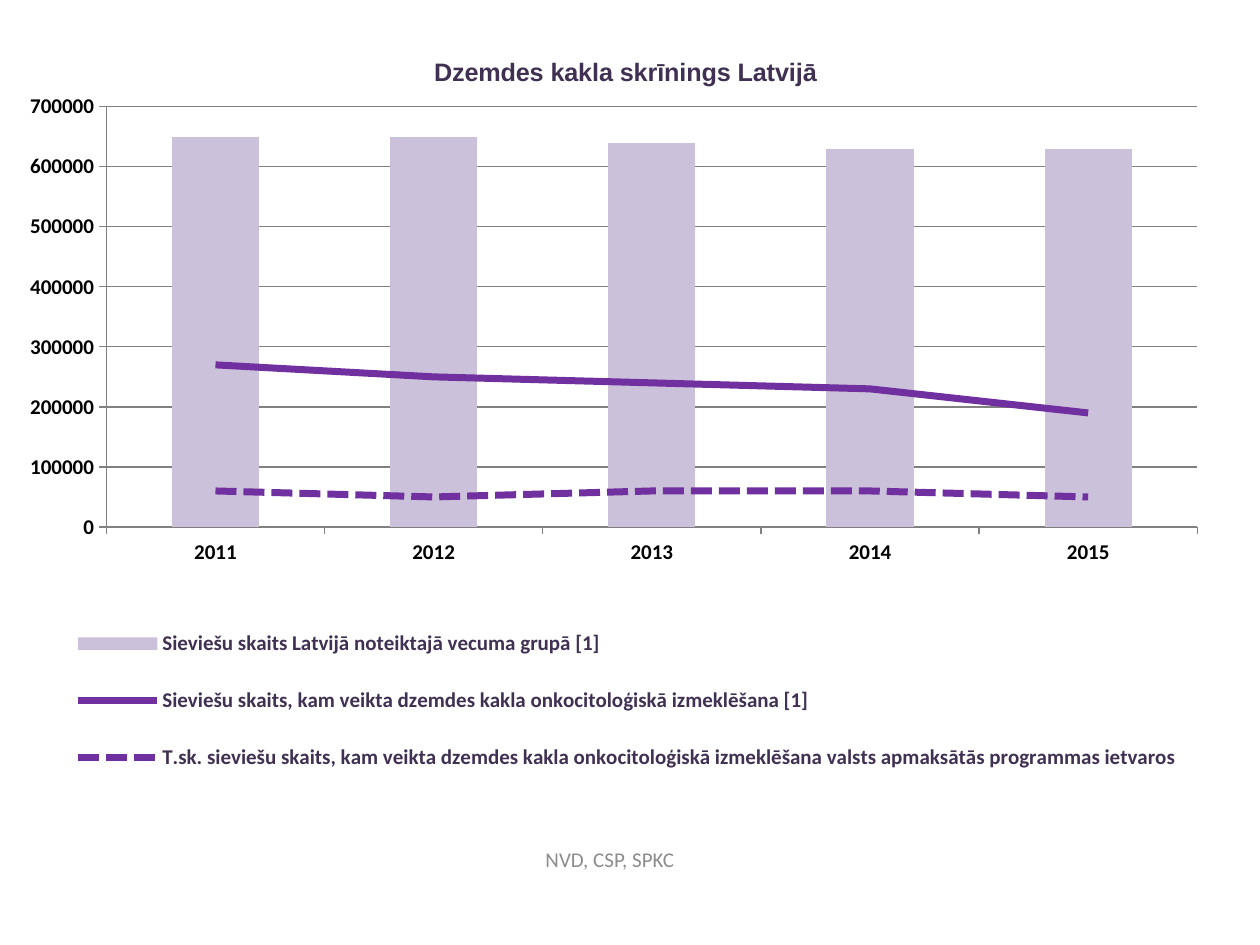
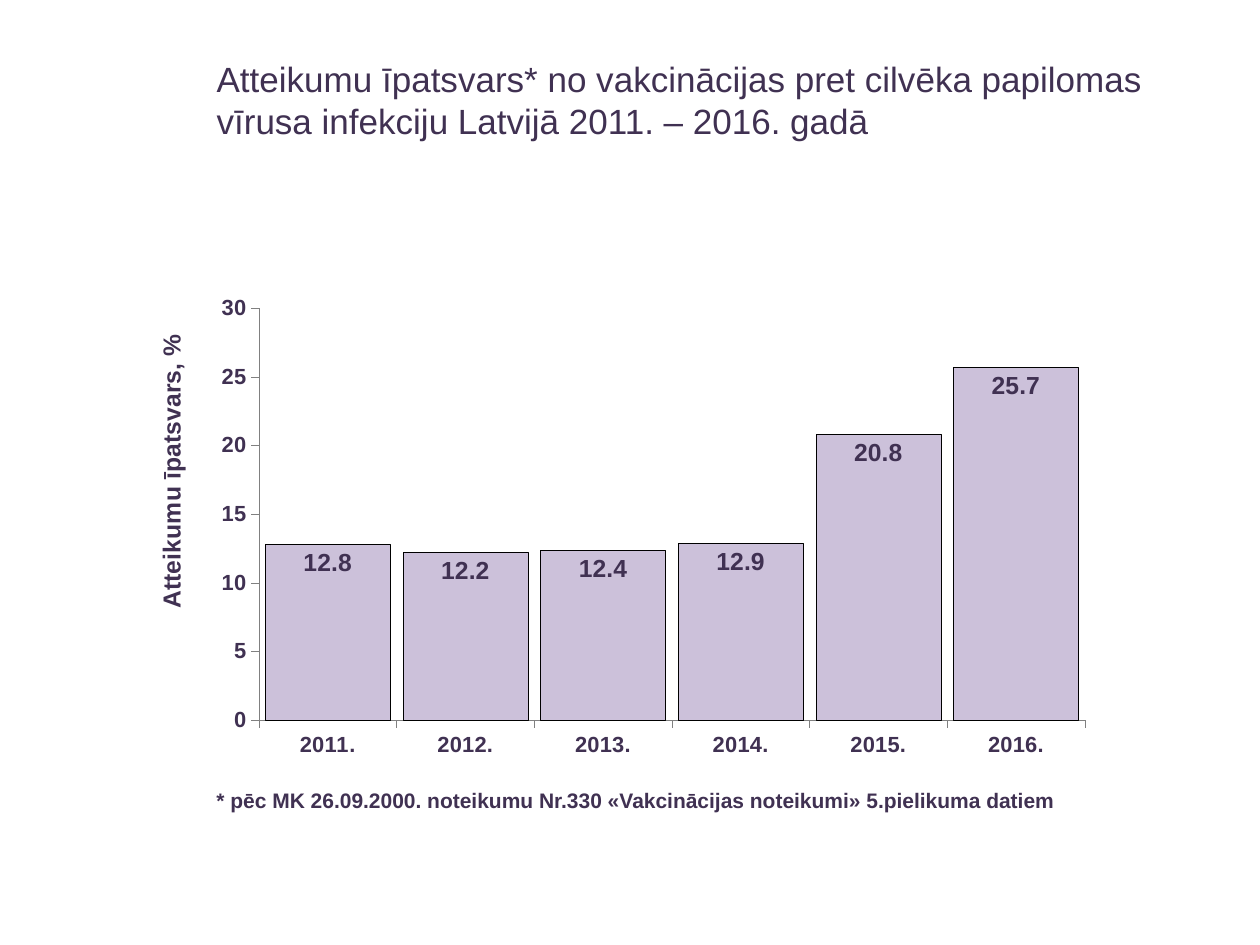
from dataclasses import dataclass

from lxml import etree
from pptx import Presentation
from pptx.chart.data import CategoryChartData
from pptx.dml.color import RGBColor
from pptx.enum import chart as ch, dml, text
from pptx.oxml import ns, xmlchemy
from pptx.util import Pt


@dataclass(frozen=True)
class Theme:
    ink: RGBColor = RGBColor(0x40, 0x31, 0x52)
    black: RGBColor = RGBColor(0, 0, 0)
    bar: RGBColor = RGBColor(0xCC, 0xC1, 0xDA)
    trend: RGBColor = RGBColor(0x70, 0x30, 0xA0)
    axis: RGBColor = RGBColor(0x80, 0x80, 0x80)
    source: RGBColor = RGBColor(0x8C, 0x8C, 0x8C)
    heading: str = "Arial"
    body: str = "Calibri"
    title_size: float = 20
    chart_title_size: float = 14.4
    label_size: float = 14.1
    tick_size: float = 12.5
    text_size: float = 12


T = Theme()


def set_font(font, color, **fmt):
    font.color.rgb = color
    for name, value in fmt.items():
        setattr(font, name, Pt(value) if name == "size" else value)


def place(element, index, **fractions):
    """Give a chart part a manual layout, as fractions of the chart."""
    for old in element.findall(ns.qn("c:layout")):
        element.remove(old)
    layout = xmlchemy.OxmlElement("c:layout")
    manual = etree.SubElement(layout, ns.qn("c:manualLayout"))
    if element.tag == ns.qn("c:plotArea"):
        etree.SubElement(manual, ns.qn("c:layoutTarget"), val="inner")
    for key in fractions:
        if key in "xy":
            etree.SubElement(manual, ns.qn(f"c:{key}Mode"), val="edge")
    for key, value in fractions.items():
        etree.SubElement(manual, ns.qn(f"c:{key}"), val=str(value))
    element.insert(index, layout)


prs = Presentation()
prs.slide_width, prs.slide_height = Pt(720), Pt(540)
title_only, blank = prs.slide_layouts[5], prs.slide_layouts[6]

# Slide 1: screening chart, columns with two lines
s = prs.slides.add_slide(blank)
data = CategoryChartData()
data.categories = ["2011", "2012", "2013", "2014", "2015"]
screening = {
    "Sieviešu skaits Latvijā noteiktajā vecuma grupā [1]":
        (650000, 650000, 640000, 630000, 630000),
    "Sieviešu skaits, kam veikta dzemdes kakla onkocitoloģiskā izmeklēšana [1]":
        (270000, 250000, 240000, 230000, 190000),
    "T.sk. sieviešu skaits, kam veikta dzemdes kakla onkocitoloģiskā izmeklēšana "
    "valsts apmaksātās programmas ietvaros":
        (60000, 50000, 60000, 60000, 50000),
}
for name, values in screening.items():
    data.add_series(name, values)
screening_chart = s.shapes.add_chart(
    ch.XL_CHART_TYPE.COLUMN_CLUSTERED, Pt(-10), Pt(13.7), Pt(730), Pt(463), data).chart
set_font(screening_chart.font, T.black, name=T.body, size=T.text_size, bold=True)

# Chart title
screening_chart.has_title = True
title = screening_chart.chart_title
p = title.text_frame.paragraphs[0]
r = p.add_run()
r.text = "Dzemdes kakla skrīnings Latvijā"
set_font(r.font, T.ink, name=T.heading, size=T.chart_title_size, bold=True)
place(title._element, 1, x=0.35, y=0.034)

# Legend
screening_chart.has_legend = True
legend = screening_chart.legend
legend.position = ch.XL_LEGEND_POSITION.BOTTOM
legend.include_in_layout = False
set_font(legend.font, T.ink, name=T.body, size=T.text_size, bold=True)
place(legend._element, 1, x=0.06, y=0.71, w=0.89, h=0.25)

# The last two series become lines on the same axes
bars = screening_chart.plots[0]._element
lines = xmlchemy.OxmlElement("c:lineChart")
etree.SubElement(lines, ns.qn("c:grouping"), val="standard")
etree.SubElement(lines, ns.qn("c:varyColors"), val="0")
for ser in bars.findall(ns.qn("c:ser"))[1:]:
    for invert in ser.findall(ns.qn("c:invertIfNegative")):
        ser.remove(invert)
    lines.append(ser)
etree.SubElement(lines, ns.qn("c:marker"), val="1")
for axis_id in bars.findall(ns.qn("c:axId")):
    etree.SubElement(lines, ns.qn("c:axId"), val=str(axis_id.get("val")))
bars.addnext(lines)
dashes = (dml.MSO_LINE.SOLID, dml.MSO_LINE.SQUARE_DOT)
for series, dash in zip(screening_chart.plots[1].series, dashes):
    series.smooth = False
    series.marker.style = ch.XL_MARKER_STYLE.NONE
    line = series.format.line
    line.color.rgb, line.width, line.dash_style = T.trend, Pt(4), dash

# Slide 2: refusals chart, columns with value labels
s2 = prs.slides.add_slide(title_only)
data = CategoryChartData()
data.categories = [f"{year}." for year in range(2011, 2017)]
data.add_series("Series 1", (12.8, 12.2, 12.4, 12.9, 20.8, 25.7))
refusal_chart = s2.shapes.add_chart(
    ch.XL_CHART_TYPE.COLUMN_CLUSTERED, Pt(64), Pt(163.4), Pt(556), Pt(294.5), data).chart
set_font(refusal_chart.font, T.ink, name=T.heading, size=T.label_size, bold=True)
refusal_chart.has_title = False
refusal_chart.has_legend = False

axis_title = refusal_chart.value_axis.axis_title
r = axis_title.text_frame.paragraphs[0].add_run()
r.text = "Atteikumu īpatsvars, %"
set_font(r.font, T.ink, name=T.heading, size=T.label_size, bold=True)
place(axis_title._element, 1, x=0.04, y=0.085)

plot = refusal_chart.plots[0]
plot.has_data_labels = True
labels = plot.data_labels
for name, value in {"show_value": True, "number_format": "#,##0.0",
                    "number_format_is_linked": False,
                    "position": ch.XL_LABEL_POSITION.INSIDE_END}.items():
    setattr(labels, name, value)
set_font(labels.font, T.ink, name=T.heading, size=T.label_size, bold=True)
outline = plot.series[0].format.line
outline.color.rgb, outline.width = T.black, Pt(0.2)

# Columns, axes and plot areas of both charts
charts = (
    (screening_chart, 150, 700000, 100000, True, 0.75,
     T.black, T.body, T.text_size, dict(x=0.097, y=0.102, w=0.854, h=0.519)),
    (refusal_chart, 10, 30, 5, False, 0.2,
     T.ink, T.heading, T.tick_size, dict(x=0.151, y=0.043, w=0.849, h=0.8)),
)
for chart, gap, top, step, grid, weight, color, face, size, area in charts:
    columns = chart.plots[0]
    columns.gap_width, columns.vary_by_categories = gap, False
    fill = columns.series[0].format.fill
    fill.solid()
    fill.fore_color.rgb = T.bar
    value_axis = chart.value_axis
    for name, value in {"minimum_scale": 0, "maximum_scale": top, "major_unit": step,
                        "has_major_gridlines": grid}.items():
        setattr(value_axis, name, value)
    value_axis.tick_labels.number_format = "General"
    value_axis.tick_labels.number_format_is_linked = False
    rules = [chart.category_axis.format.line, value_axis.format.line]
    if grid:
        rules.append(value_axis.major_gridlines.format.line)
    for rule in rules:
        rule.color.rgb, rule.width = T.axis, Pt(weight)
    for axis in (chart.category_axis, value_axis):
        axis.major_tick_mark = ch.XL_TICK_MARK.OUTSIDE
        axis.minor_tick_mark = ch.XL_TICK_MARK.NONE
        set_font(axis.tick_labels.font, color, name=face, size=size, bold=True)
    place(columns._element.getparent(), 0, **area)

# Slide title, source line and footnote
source = s.shapes.add_textbox(Pt(186.5), Pt(476.6), Pt(324), Pt(28.8))
footnote = s2.shapes.add_textbox(Pt(116.6), Pt(446.4), Pt(594), Pt(21.6))
heading = s2.shapes.title
heading.left, heading.top, heading.width, heading.height = (
    Pt(116.6), Pt(29.5), Pt(594), Pt(55.4))
texts = (
    (source, "NVD, CSP, SPKC", text.PP_ALIGN.CENTER, text.MSO_ANCHOR.MIDDLE,
     T.source, dict(name=T.body, size=T.text_size)),
    (heading, "Atteikumu īpatsvars* no vakcinācijas pret cilvēka papilomas "
     "vīrusa infekciju Latvijā 2011. – 2016. gadā", text.PP_ALIGN.LEFT,
     text.MSO_ANCHOR.TOP, T.ink, dict(name=T.heading, size=T.title_size)),
    (footnote, "* pēc MK 26.09.2000. noteikumu Nr.330 «Vakcinācijas noteikumi» "
     "5.pielikuma datiem", text.PP_ALIGN.LEFT, text.MSO_ANCHOR.TOP,
     T.ink, dict(name=T.heading, size=T.text_size, bold=True)),
)
for sp, words, align, anchor, color, fmt in texts:
    tf = sp.text_frame
    tf.word_wrap, tf.vertical_anchor = True, anchor
    tf.auto_size = text.MSO_AUTO_SIZE.NONE
    p = tf.paragraphs[0]
    p.alignment = align
    r = p.add_run()
    r.text = words
    set_font(r.font, color, **fmt)

prs.save("out.pptx")
